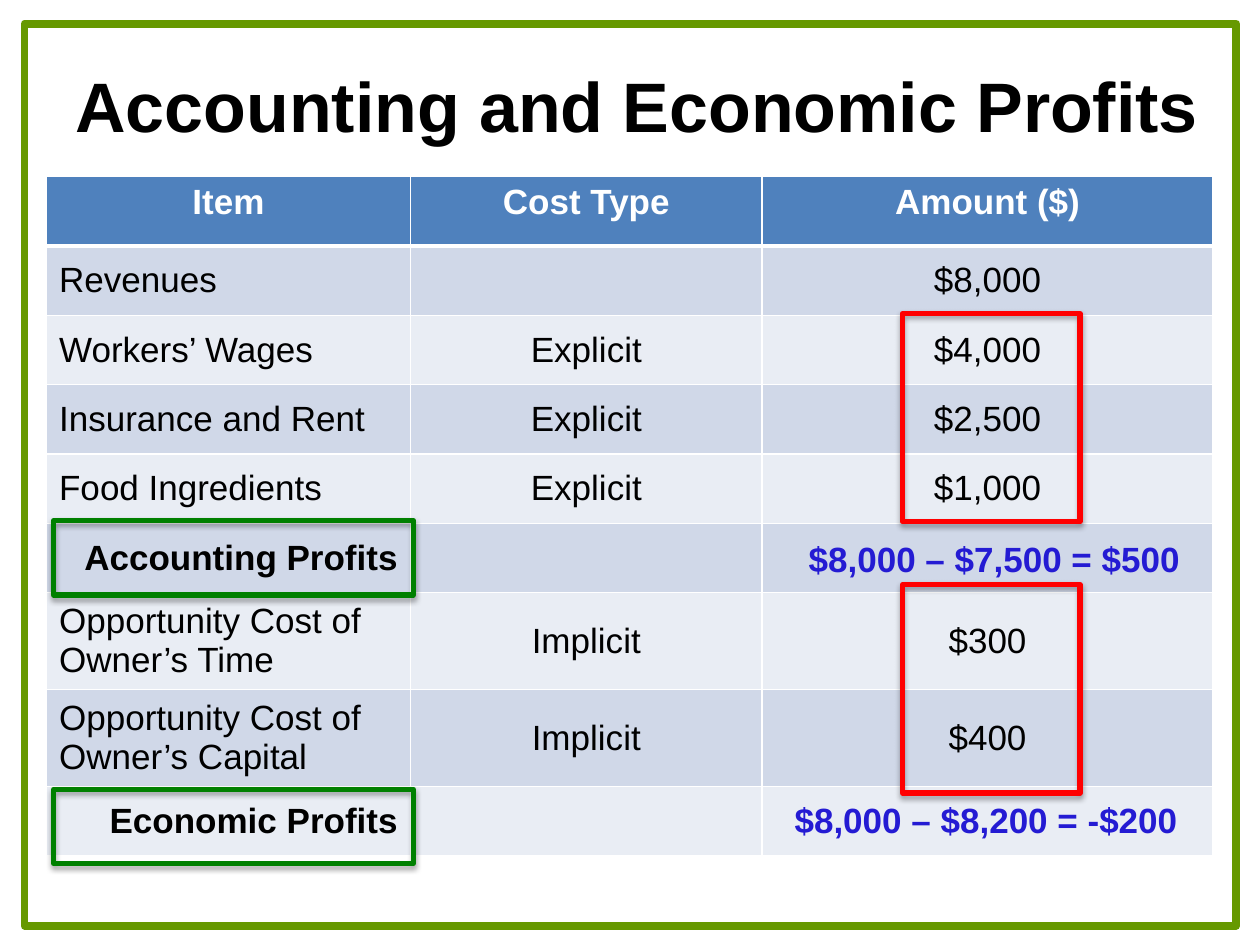
from lxml import etree
from pptx import Presentation
from pptx.dml.color import RGBColor
from pptx.enum.shapes import MSO_SHAPE
from pptx.enum.text import MSO_ANCHOR, MSO_AUTO_SIZE, PP_ALIGN
from pptx.oxml.ns import qn
from pptx.util import Pt

RECT = MSO_SHAPE.RECTANGLE
TOP, MIDDLE = MSO_ANCHOR.TOP, MSO_ANCHOR.MIDDLE
LEFT, CENTER, RIGHT = PP_ALIGN.LEFT, PP_ALIGN.CENTER, PP_ALIGN.RIGHT
FIT_SHAPE = MSO_AUTO_SIZE.SHAPE_TO_FIT_TEXT

FONT = "Arial"
BLACK, WHITE = "000000", "FFFFFF"
FRAME_GREEN, GREEN, RED, BLUE = "669900", "008000", "FF0000", "241BD3"
HEADER_FILL, BANDS = "4F81BD", ("D0D8E8", "E9EDF4")

COL_WIDTHS = (208, 201, 257.6)
ROW_HEIGHT, TALL_ROW_HEIGHT = 39.6, 55.4
ROWS = (
    ("Item", "Cost Type", "Amount ($)"),
    ("Revenues", "", "$8,000"),
    ("Workers’ Wages", "Explicit", "$4,000"),
    ("Insurance and Rent", "Explicit", "$2,500"),
    ("Food Ingredients", "Explicit", "$1,000"),
    ("Accounting Profits", "", ""),
    ("Opportunity Cost of Owner’s Time", "Implicit", "$300"),
    ("Opportunity Cost of Owner’s Capital", "Implicit", "$400"),
    ("Economic Profits", "", ""),
)
PROFIT_ROWS = (5, 8)


def rgb(color):
    return RGBColor.from_string(color)


def format_text(tf, size, color, bold, align=LEFT):
    for p in tf.paragraphs:
        p.alignment = align
        for r in p.runs:
            r.font.name = FONT
            r.font.size = Pt(size)
            r.font.bold = bold
            r.font.color.rgb = rgb(color)


def add_text(slide, text, left, top, width, height, size, color, wrap):
    tf = slide.shapes.add_textbox(Pt(left), Pt(top), Pt(width), Pt(height)).text_frame
    tf.text = text
    tf.word_wrap = wrap
    if wrap:
        tf.vertical_anchor = MIDDLE
    else:
        tf.auto_size = FIT_SHAPE
    format_text(tf, size, color, True)


def add_outline(slide, left, top, width, height, color, weight):
    sp = slide.shapes.add_shape(RECT, Pt(left), Pt(top), Pt(width), Pt(height))
    sp.shadow.inherit = False
    sp.fill.background()
    sp.line.color.rgb = rgb(color)
    sp.line.width = Pt(weight)
    return sp


def add_shadow(sp):
    effects = sp.element.spPr.find(qn("a:effectLst"))
    shadow = etree.SubElement(
        effects, qn("a:outerShdw"), blurRad=str(Pt(3.1)), dist=str(Pt(1.8)),
        dir="5400000", rotWithShape="0")
    color = etree.SubElement(shadow, qn("a:srgbClr"), val=BLACK)
    etree.SubElement(color, qn("a:alpha"), val="35000")


def add_highlight(slide, left, top, width, height, color):
    add_shadow(add_outline(slide, left, top, width, height, color, 3))


def set_borders(cell, top, bottom):
    """Draw white cell borders; must run before the fill is set."""
    tc_pr = cell._tc.get_or_add_tcPr()
    for side, weight in (("L", 1), ("R", 1), ("T", top), ("B", bottom)):
        ln = etree.SubElement(tc_pr, qn("a:ln" + side), w=str(Pt(weight)))
        fill = etree.SubElement(ln, qn("a:solidFill"))
        etree.SubElement(fill, qn("a:srgbClr"), val=WHITE)


def fill_cell(cell, text, row, col):
    header, profit = row == 0, row in PROFIT_ROWS
    set_borders(cell, 3 if row == 1 else 1, 3 if header else 1)
    cell.fill.solid()
    cell.fill.fore_color.rgb = rgb(HEADER_FILL if header else BANDS[(row - 1) % 2])
    cell.vertical_anchor = TOP if header else MIDDLE
    if header or col > 0:
        align = CENTER
    else:
        align = RIGHT if profit else LEFT
    cell.text_frame.text = text
    format_text(cell.text_frame, 20, WHITE if header else BLACK, header or profit, align)


def add_profit_table(slide, left, top):
    heights = [TALL_ROW_HEIGHT if "Opportunity" in row[0] else ROW_HEIGHT for row in ROWS]
    table = slide.shapes.add_table(
        len(ROWS), len(COL_WIDTHS), Pt(left), Pt(top),
        Pt(sum(COL_WIDTHS)), Pt(sum(heights))).table
    table.horz_banding = False
    for column, width in zip(table.columns, COL_WIDTHS):
        column.width = Pt(width)
    for i, (row, height) in enumerate(zip(ROWS, heights)):
        table.rows[i].height = Pt(height)
        for j, text in enumerate(row):
            fill_cell(table.cell(i, j), text, i, j)


def main():
    prs = Presentation()
    prs.slide_width, prs.slide_height = Pt(720), Pt(540)
    slide = prs.slides.add_slide(prs.slide_layouts[6])

    add_outline(slide, 14, 13.5, 692.5, 515.5, FRAME_GREEN, 4.5)
    add_text(slide, "Accounting and Economic Profits", 36, 0, 661, 120, 40, BLACK, True)
    add_profit_table(slide, 26.6, 101)

    for top in (297.5, 451):
        add_highlight(slide, 30.7, top, 205.5, 42.5, GREEN)
    for top in (179.2, 334.2):
        add_highlight(slide, 515.7, top, 101.5, 119, RED)
    add_text(slide, "$8,000 – $7,500 = $500", 455, 303.3, 228, 31.5, 20, BLUE, False)
    add_text(slide, "$8,000 – $8,200 = -$200", 447, 453, 235, 31.5, 20, BLUE, False)

    prs.save("out.pptx")


if __name__ == "__main__":
    main()
